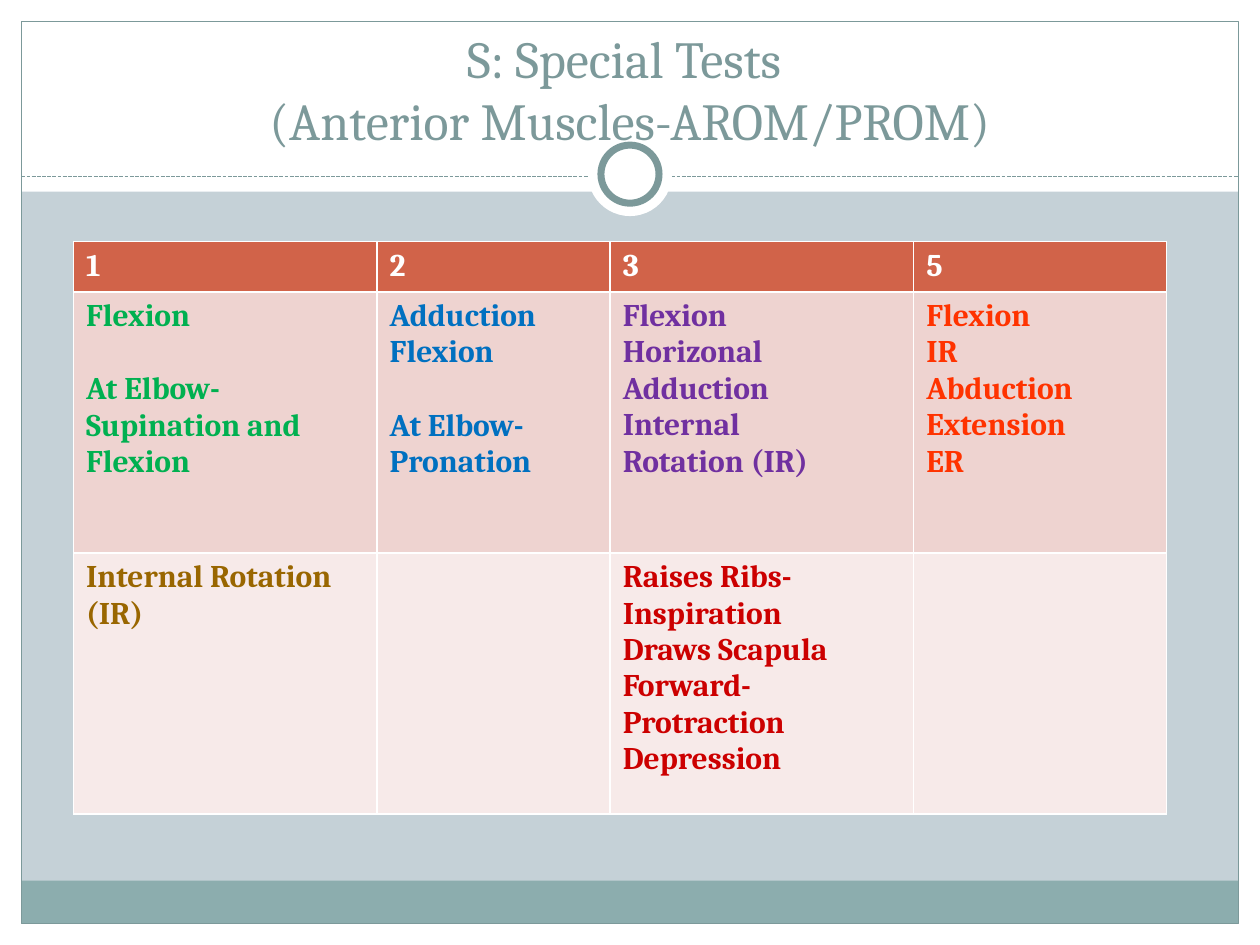
from pptx import Presentation
from pptx.dml.color import RGBColor
from pptx.enum.dml import MSO_LINE as Dash
from pptx.enum.shapes import MSO_CONNECTOR as Link, MSO_SHAPE as Kind
from pptx.enum.text import MSO_ANCHOR as Anchor, PP_ALIGN as Align
from pptx.oxml.ns import qn
from pptx.util import Pt
from lxml.etree import SubElement

WHITE = RGBColor(0xFF, 0xFF, 0xFF)
BACK = RGBColor(0xC5, 0xD1, 0xD7)
BAND = RGBColor(0x8C, 0xAD, 0xAE)
SLATE = RGBColor(0x7C, 0x99, 0x9A)
GREEN = RGBColor(0x00, 0xB0, 0x50)
BLUE = RGBColor(0x00, 0x70, 0xC0)
PURPLE = RGBColor(0x70, 0x30, 0xA0)
ORANGE = RGBColor(0xFF, 0x33, 0x00)
BROWN = RGBColor(0x99, 0x66, 0x00)
RED = RGBColor(0xCC, 0x00, 0x00)
FILLS = [RGBColor(0xD1, 0x63, 0x49), RGBColor(0xEE, 0xD3, 0xD0),
         RGBColor(0xF7, 0xEA, 0xE9)]
FONT = "Cambria"

# Content: each cell is a text colour and its paragraphs
TITLE = "S: Special Tests \v(Anterior Muscles-AROM/PROM)"
ROWS = [
    [(WHITE, [num]) for num in "1235"],
    [(GREEN, ["Flexion", "At Elbow-Supination and Flexion"]),
     (BLUE, ["Adduction", "Flexion", "At Elbow-Pronation"]),
     (PURPLE, ["Flexion", "Horizonal Adduction", "Internal", "Rotation (IR)"]),
     (ORANGE, ["Flexion", "IR", "Abduction", "Extension", "ER"])],
    [(BROWN, ["Internal Rotation (IR)"]),
     (WHITE, []),
     (RED, ["Raises Ribs-Inspiration", "Draws Scapula Forward-Protraction",
            "Depression"]),
     (WHITE, [])],
]

# Layout in points
WIDTH, HEIGHT = 720, 540
EDGE = 12.25
RULE = 100.8
COLS = [173.5, 133.2, 173.5, 144.5]
TALLS = [28, 149.2, 149.2]
GAP = 21

deck = Presentation()
deck.slide_width, deck.slide_height = Pt(WIDTH), Pt(HEIGHT)
slide = deck.slides.add_slide(deck.slide_layouts[6])
slide.background.fill.solid()
slide.background.fill.fore_color.rgb = BACK


def draw(kind, box, fill=None, line=None, weight=0.75):
    shape = slide.shapes.add_shape(kind, *map(Pt, box))
    shape.shadow.inherit = False
    if fill is None:
        shape.fill.background()
    else:
        shape.fill.solid()
        shape.fill.fore_color.rgb = fill
    if line is None:
        shape.line.fill.background()
    else:
        shape.line.color.rgb = line
        shape.line.width = Pt(weight)


def style(para, size, color, bold=False):
    for run in para.runs:
        font = run.font
        font.name, font.size, font.bold = FONT, Pt(size), bold
        font.color.rgb = color


def edge(cell):
    props = cell._tc.get_or_add_tcPr()
    for side in "LRTB":
        line = SubElement(props, qn(f"a:ln{side}"), w=str(Pt(1)))
        fill = SubElement(line, qn("a:solidFill"))
        SubElement(fill, qn("a:srgbClr"), val=str(WHITE))


# White margins, bottom band and frame
inner = WIDTH - 2 * EDGE
for box in [(0, HEIGHT - EDGE, WIDTH, EDGE), (0, 0, WIDTH, 109.5),
            (0, 0, EDGE, HEIGHT), (WIDTH - EDGE, 0, EDGE, HEIGHT)]:
    draw(Kind.RECTANGLE, box, WHITE)
draw(Kind.RECTANGLE, (EDGE, 503.3, inner, 24.5), BAND)
draw(Kind.RECTANGLE, (EDGE, EDGE, inner, HEIGHT - 2 * EDGE), line=SLATE)

# Dashed rule with a ring in the middle
rule = slide.shapes.add_connector(
    Link.STRAIGHT, Pt(EDGE), Pt(RULE), Pt(WIDTH - EDGE), Pt(RULE))
rule.line.color.rgb = SLATE
rule.line.width = Pt(0.75)
rule.line.dash_style = Dash.SQUARE_DOT
SubElement(rule._element.spPr, qn("a:effectLst"))
for size, line in [(48, None), (33.2, SLATE)]:
    box = ((WIDTH - size) / 2, 99.5 - size / 2, size, size)
    draw(Kind.OVAL, box, WHITE, line, 4)

# Title
frame = slide.shapes.add_textbox(Pt(24), Pt(18), Pt(672), Pt(72)).text_frame
frame.word_wrap = True
frame.vertical_anchor = Anchor.BOTTOM
frame.text = TITLE
frame.paragraphs[0].alignment = Align.CENTER
style(frame.paragraphs[0], 29.7, SLATE)

# Table of movements
table = slide.shapes.add_table(
    len(ROWS), len(COLS), Pt(42), Pt(138), Pt(sum(COLS)), Pt(sum(TALLS))).table
for col, wide in zip(table.columns, COLS):
    col.width = Pt(wide)
for row, tall, fill, cells in zip(table.rows, TALLS, FILLS, ROWS):
    row.height = Pt(tall)
    for cell, (color, lines) in zip(row.cells, cells):
        edge(cell)
        cell.fill.solid()
        cell.fill.fore_color.rgb = fill
        cell.text_frame.text = "\n".join(lines)
        for para in cell.text_frame.paragraphs:
            style(para, 18, color, True)
            if para.text.startswith("At Elbow"):
                para.space_before = Pt(GAP)

deck.save("out.pptx")
